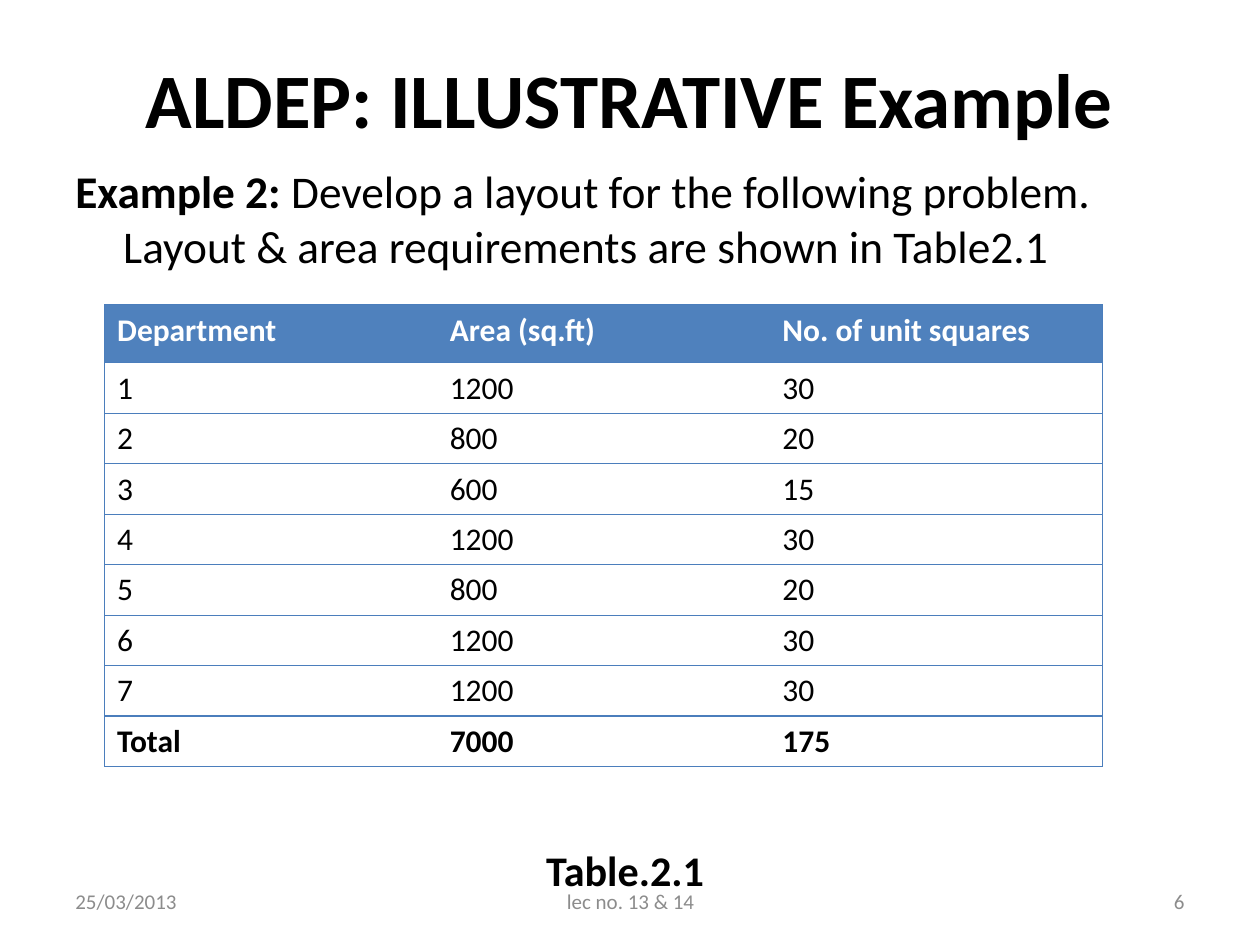
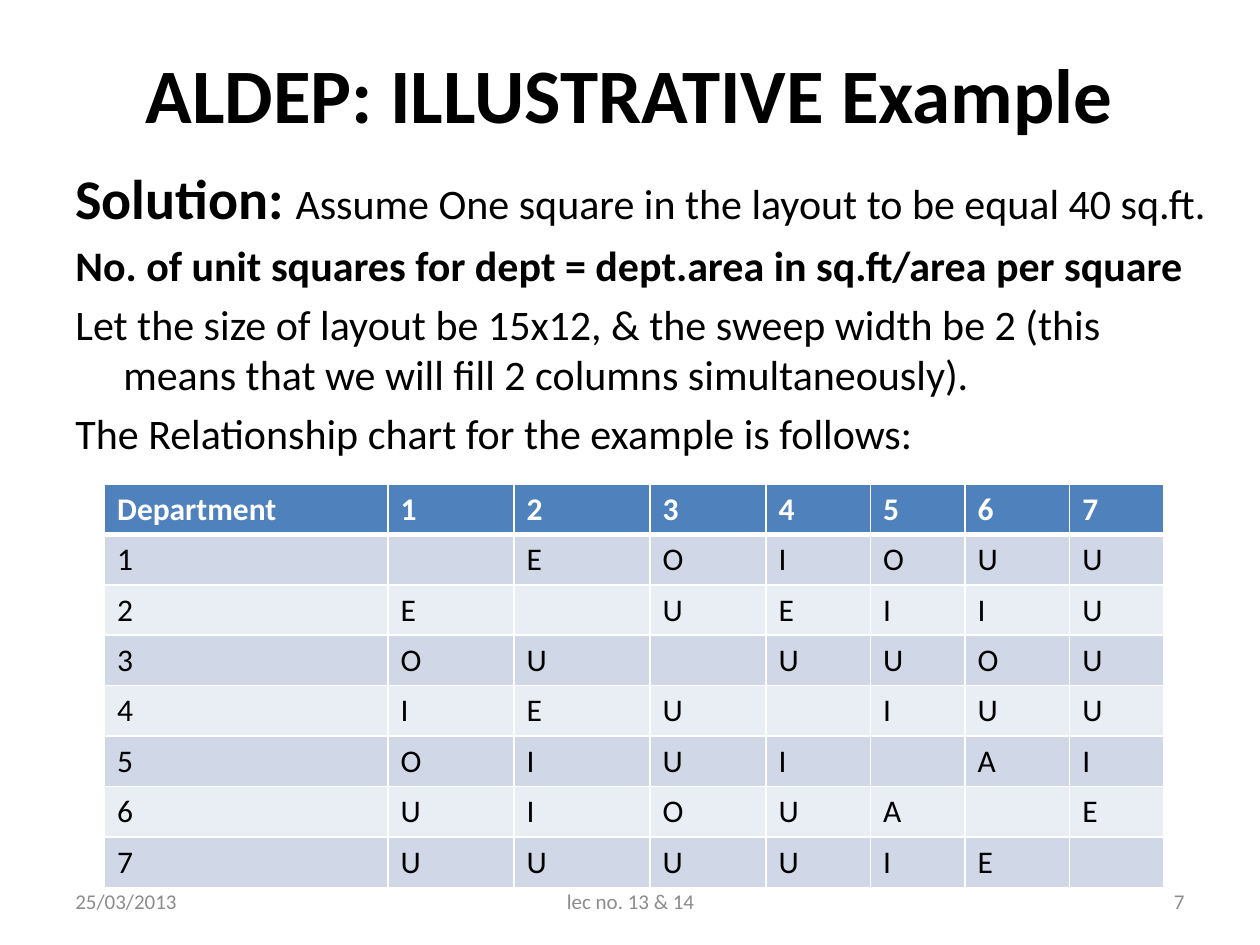
"""Build two slides of a facility layout example: area requirements and relationship chart."""
from lxml.etree import SubElement
from pptx import Presentation
from pptx.dml.color import RGBColor
from pptx.enum.text import MSO_ANCHOR, PP_ALIGN
from pptx.oxml.ns import qn
from pptx.util import Inches, Pt

BLACK, WHITE, GRAY = "000000", "FFFFFF", "8C8C8C"
HEADER_BLUE, RULE_BLUE = "4F81BD", "4B7EBC"
BANDS = ["E9EDF4", "D0D8E8"]
HANGING = Inches(0.38)
hex_color = RGBColor.from_string


def add_run(paragraph, text, size, color=BLACK, bold=False):
    run = paragraph.add_run()
    run.text = text
    for name, value in {"name": "Calibri", "size": Pt(size), "bold": bold}.items():
        setattr(run.font, name, value)
    run.font.color.rgb = hex_color(color)


def add_text_box(slide, box, paragraphs, color=BLACK, anchor=MSO_ANCHOR.MIDDLE, hanging=0):
    shape = slide.shapes.add_textbox(*map(Inches, box))
    frame = shape.text_frame
    frame.word_wrap = True
    frame.vertical_anchor = anchor
    for index, (alignment, space_before, runs) in enumerate(paragraphs):
        paragraph = frame.add_paragraph() if index else frame.paragraphs[0]
        paragraph.alignment = alignment
        paragraph.space_before = Pt(space_before)
        properties = paragraph._p.get_or_add_pPr()
        properties.set("marL", str(hanging))
        properties.set("indent", str(-hanging))
        for text, size, bold in runs:
            add_run(paragraph, text, size, color, bold)


areas = [1200, 800, 600, 1200, 800, 1200, 1200]
square_area = 40
area_rows = [["Department", "Area (sq.ft)", "No. of unit squares"]]
area_rows += [[number, area, area // square_area] for number, area in enumerate(areas, 1)]
area_rows.append(["Total", sum(areas), sum(areas) // square_area])

pairs = ["EOIOUU", "UEIIU", "UUOU", "IUU", "AI", "E"]
ratings = {}
for first, letters in enumerate(pairs, 1):
    for second, letter in enumerate(letters, first + 1):
        ratings[first, second] = ratings[second, first] = letter
departments = range(1, 8)
relationship_rows = [["Department", *departments]]
for row in departments:
    relationship_rows.append([row] + [ratings.get((row, column), "") for column in departments])

slides = [
    {
        "number": "6",
        "title_height": 0.95,
        "body_box": (0.5, 1.25, 9, 6),
        "body": [
            (PP_ALIGN.LEFT, 0, [
                ("Example 2:", 25.9, True),
                (" Develop a layout for the following problem. "
                 "Layout & area requirements are shown in Table2.1", 25.9, False)]),
            (PP_ALIGN.CENTER, 327, [("Table.2.1 ", 24.1, True)]),
        ],
        "table_top": 2.42,
        "rows": area_rows,
        "column_widths": [2.64] * 3,
        "header_height": 0.46,
        "banded": False,
    },
    {
        "number": "7",
        "title_height": 0.87,
        "body_box": (0.5, 1.25, 9.25, 6.08),
        "body": [
            (PP_ALIGN.LEFT, 0, [
                ("Solution:", 32, True),
                (" ", 28, False),
                ("Assume One square in the layout to be equal 40 sq.ft.", 24, False)]),
            (PP_ALIGN.LEFT, 4.8, [
                ("No. of unit squares for dept = dept.area in sq.ft/area per square", 24, True)]),
            (PP_ALIGN.LEFT, 4.8, [
                ("Let the size of layout be 15x12, & the sweep width be 2 "
                 "(this means that we will fill 2 columns simultaneously).", 24, False)]),
            (PP_ALIGN.LEFT, 4.8, [
                ("The Relationship chart for the example is follows:", 24, False)]),
        ],
        "table_top": 3.84,
        "rows": relationship_rows,
        "column_widths": [2.25, 1, 1.08, 0.92, 0.83, 0.75, 0.83, 0.75],
        "header_height": 0.4,
        "banded": True,
    },
]

presentation = Presentation()
presentation.slide_width = Inches(10)
presentation.slide_height = Inches(7.5)

for content in slides:
    slide = presentation.slides.add_slide(presentation.slide_layouts[6])
    add_text_box(slide, (0.5, 0.3, 9, content["title_height"]),
                 [(PP_ALIGN.CENTER, 0, [("ALDEP: ILLUSTRATIVE Example", 44, True)])])
    add_text_box(slide, content["body_box"], content["body"],
                 anchor=MSO_ANCHOR.TOP, hanging=HANGING)

    rows, widths, banded = content["rows"], content["column_widths"], content["banded"]
    row_heights = [content["header_height"]] + [0.4] * (len(rows) - 1)
    table = slide.shapes.add_table(
        len(rows), len(widths), Inches(0.83), Inches(content["table_top"]),
        Inches(sum(widths)), Inches(sum(row_heights))).table
    table.horz_banding = False
    for column, width in zip(table.columns, widths):
        column.width = Inches(width)
    for row, height in zip(table.rows, row_heights):
        row.height = Inches(height)

    for row_index, values in enumerate(rows):
        is_header = row_index == 0
        for column_index, value in enumerate(values):
            cell = table.cell(row_index, column_index)
            if value != "":
                add_run(cell.text_frame.paragraphs[0], str(value), 18,
                        WHITE if is_header else BLACK, is_header or values[0] == "Total")

            visible = {
                "lnL": banded or column_index == 0,
                "lnR": banded or column_index == len(widths) - 1,
                "lnT": True,
                "lnB": True,
            }
            for side, shown in visible.items():
                thick = banded and (row_index, side) in [(0, "lnB"), (1, "lnT")]
                points = 3 if thick else 1 if banded else 0.75
                line = SubElement(cell._tc.get_or_add_tcPr(), qn(f"a:{side}"), w=str(Pt(points)))
                fill = SubElement(line, qn("a:solidFill" if shown else "a:noFill"))
                if shown:
                    SubElement(fill, qn("a:srgbClr"), val=WHITE if banded else RULE_BLUE)

            if is_header or banded:
                cell.fill.solid()
                cell.fill.fore_color.rgb = hex_color(
                    HEADER_BLUE if is_header else BANDS[row_index % 2])
            else:
                cell.fill.background()

    footers = [
        (0.5, 2.33, PP_ALIGN.LEFT, "25/03/2013"),
        (7.17, 2.33, PP_ALIGN.RIGHT, content["number"]),
        (3.42, 3.17, PP_ALIGN.CENTER, "lec no. 13 & 14"),
    ]
    for left, width, alignment, text in footers:
        add_text_box(slide, (left, 6.95, width, 0.4),
                     [(alignment, 0, [(text, 12, False)])], color=GRAY)

presentation.save("out.pptx")
